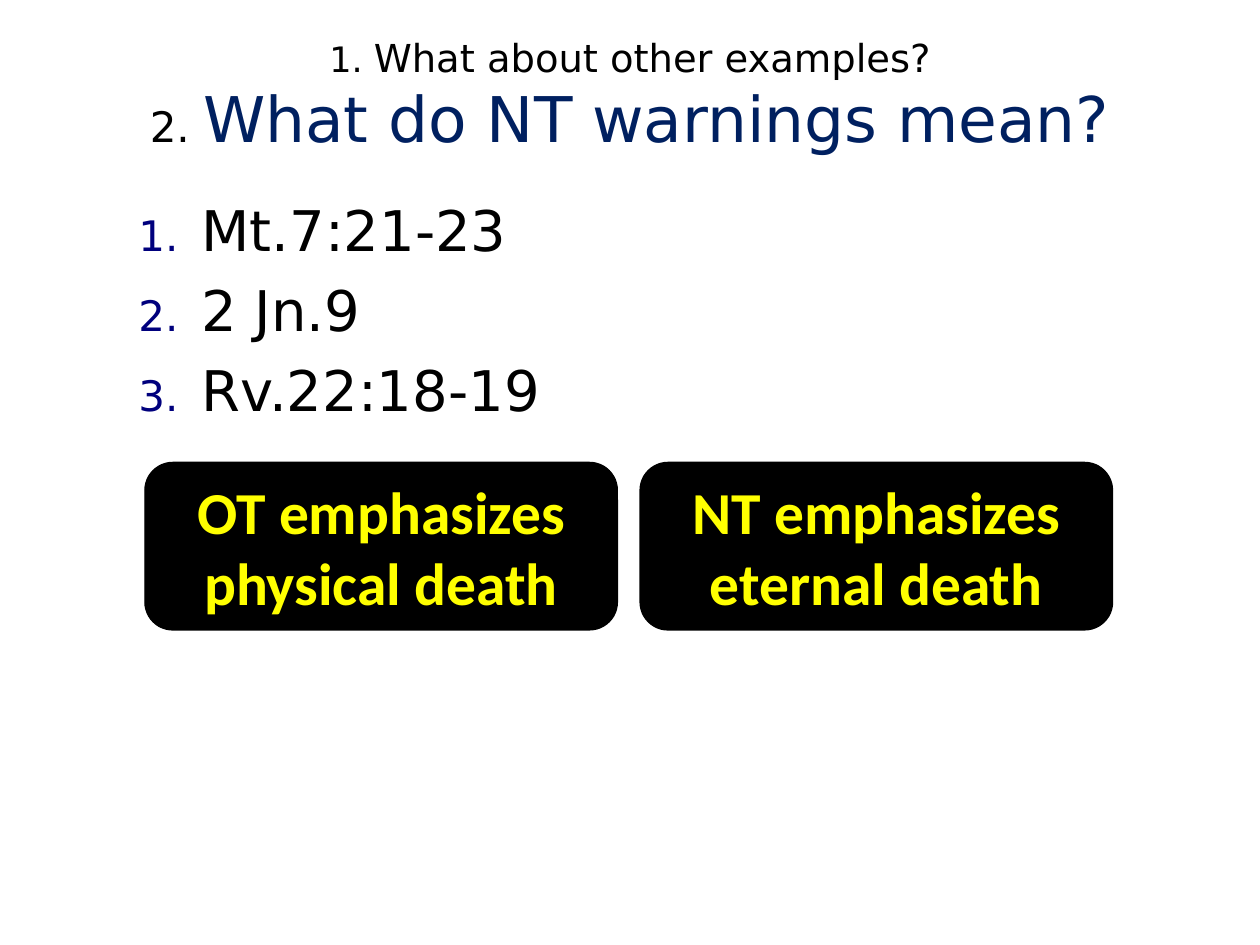
from typing import NamedTuple

from lxml import etree
from pptx import Presentation
from pptx.dml.color import RGBColor
from pptx.enum.shapes import MSO_SHAPE
from pptx.enum.text import MSO_ANCHOR, PP_ALIGN
from pptx.oxml.ns import qn
from pptx.util import Inches, Pt

ROUNDED = MSO_SHAPE.ROUNDED_RECTANGLE
MIDDLE = MSO_ANCHOR.MIDDLE
CENTER = PP_ALIGN.CENTER

BLACK = RGBColor(0x00, 0x00, 0x00)
NAVY = RGBColor(0x00, 0x20, 0x60)
NUMBER_BLUE = RGBColor(0x00, 0x00, 0x7D)
YELLOW = RGBColor(0xFF, 0xFF, 0x00)

HEADING_FONT = "DejaVu Sans"
CARD_FONT = "Calibri"

SLIDE_WIDTH, SLIDE_HEIGHT = Inches(10), Inches(7.5)
MARGIN = Inches(0.5)
CONTENT_WIDTH = SLIDE_WIDTH - 2 * MARGIN
TITLE_HEIGHT = Inches(1.5)
BODY_HEIGHT = Inches(5.58)

CARD_LEFT, CARD_TOP = Inches(1.15), Inches(3.67)
CARD_WIDTH, CARD_HEIGHT = Inches(3.75), Inches(1.33)
CARD_PITCH = Inches(3.93)


class TitlePart(NamedTuple):
    text: str
    size: int
    color: RGBColor


TITLE_LINES = [
    [TitlePart("1. ", 20, BLACK), TitlePart("What about other examples?", 22, BLACK)],
    [TitlePart("2. ", 24, BLACK), TitlePart("What do NT warnings mean?", 36, NAVY)],
]
PASSAGES = ["Mt.7:21-23", "2 Jn.9", "Rv.22:18-19"]
CONTRASTS = ["OT emphasizes physical death", "NT emphasizes eternal death"]


def add_text_frame(slide, top: int, height: int):
    frame = slide.shapes.add_textbox(MARGIN, top, CONTENT_WIDTH, height).text_frame
    frame.word_wrap = True
    return frame


def add_title(slide) -> None:
    frame = add_text_frame(slide, 0, TITLE_HEIGHT)
    frame.vertical_anchor = MIDDLE
    paragraph = frame.paragraphs[0]
    paragraph.alignment = CENTER
    for index, line in enumerate(TITLE_LINES):
        if index:
            paragraph.add_line_break()
        for part in line:
            run = paragraph.add_run()
            run.text = part.text
            run.font.name = HEADING_FONT
            run.font.size = Pt(part.size)
            run.font.color.rgb = part.color


def number_paragraph(paragraph) -> None:
    """Give the paragraph a hanging automatic number in a smaller blue type."""
    properties = paragraph._p.get_or_add_pPr()
    properties.set("marL", str(Inches(1)))
    properties.set("indent", str(-Inches(0.5)))
    color = etree.SubElement(properties, qn("a:buClr"))
    etree.SubElement(color, qn("a:srgbClr"), val=str(NUMBER_BLUE))
    etree.SubElement(properties, qn("a:buSzPct"), val="75000")
    etree.SubElement(properties, qn("a:buFont"), typeface=HEADING_FONT)
    etree.SubElement(properties, qn("a:buAutoNum"), type="arabicPeriod")


def add_passages(slide) -> None:
    frame = add_text_frame(slide, TITLE_HEIGHT, BODY_HEIGHT)
    frame.text = "\n".join(PASSAGES)
    for paragraph in frame.paragraphs:
        paragraph.space_before = Pt(7.5)
        paragraph.font.name = HEADING_FONT
        paragraph.font.size = Pt(32)
        paragraph.font.color.rgb = BLACK
        number_paragraph(paragraph)


def add_contrast_card(slide, column: int, text: str) -> None:
    card = slide.shapes.add_shape(
        ROUNDED, CARD_LEFT + column * CARD_PITCH, CARD_TOP, CARD_WIDTH, CARD_HEIGHT
    )
    card.shadow.inherit = False
    card.fill.solid()
    card.fill.fore_color.rgb = BLACK
    card.line.color.rgb = BLACK
    card.line.width = Pt(0.75)
    frame = card.text_frame
    frame.word_wrap = True
    frame.vertical_anchor = MIDDLE
    paragraph = frame.paragraphs[0]
    paragraph.text = text
    paragraph.alignment = CENTER
    paragraph.font.name = CARD_FONT
    paragraph.font.size = Pt(34)
    paragraph.font.bold = True
    paragraph.font.color.rgb = YELLOW


def main() -> None:
    presentation = Presentation()
    presentation.slide_width = SLIDE_WIDTH
    presentation.slide_height = SLIDE_HEIGHT
    slide = presentation.slides.add_slide(presentation.slide_layouts[6])
    add_title(slide)
    add_passages(slide)
    for column, text in enumerate(CONTRASTS):
        add_contrast_card(slide, column, text)
    presentation.save("out.pptx")


if __name__ == "__main__":
    main()
